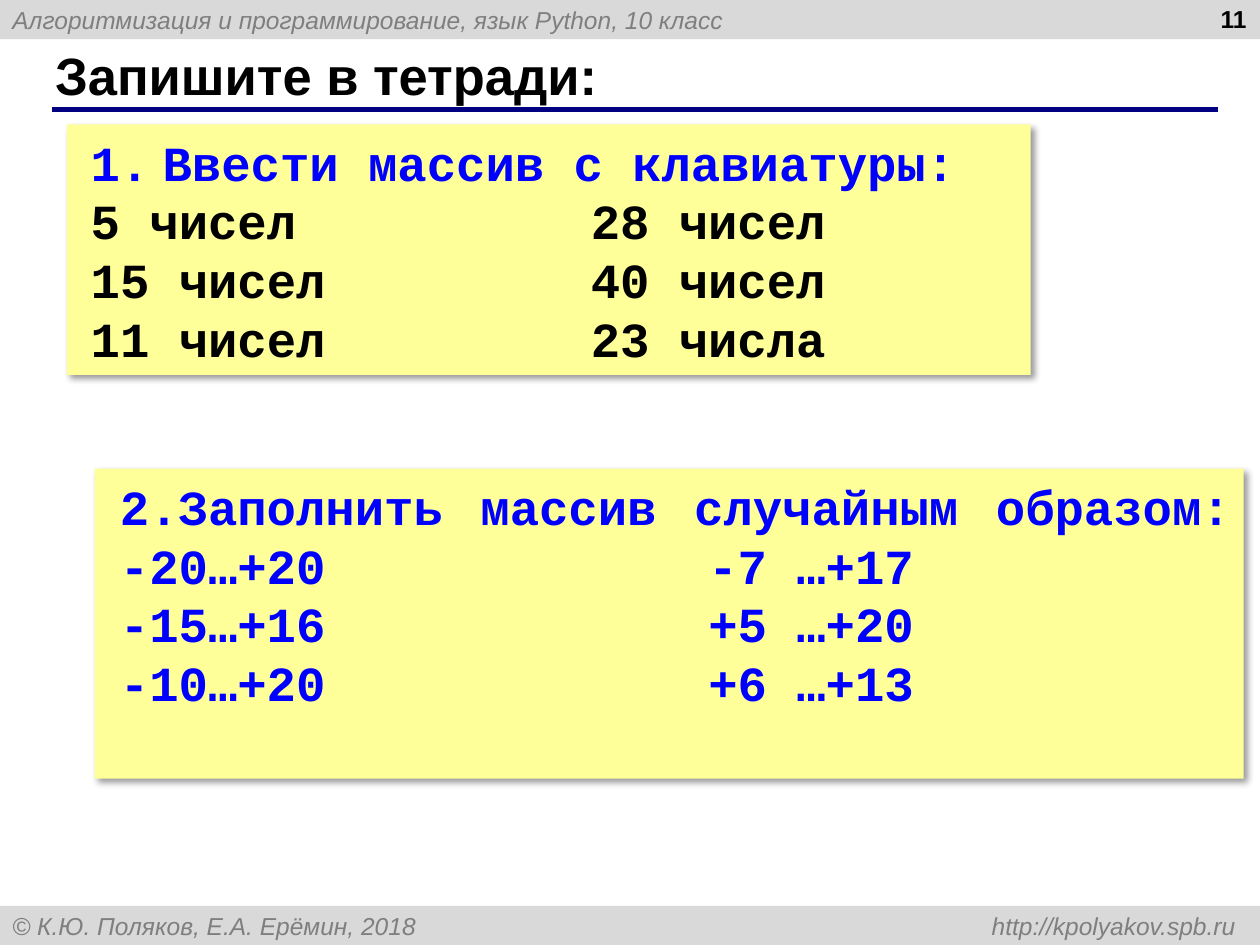
"""Build the notebook exercise slide about filling arrays."""
from dataclasses import dataclass
from typing import Optional

import pptx
import pptx.dml.color
import pptx.enum.shapes
import pptx.enum.text
import pptx.oxml
import pptx.oxml.ns
import pptx.util

Cm = pptx.util.Cm
ALIGN = pptx.enum.text.PP_ALIGN
ANCHOR = pptx.enum.text.MSO_ANCHOR
COLORS = {
    "bar": "D9D9D9",
    "bar_text": "7F7F7F",
    "rule": "000080",
    "card": "FFFF99",
    "task": "0000FF",
    "black": "000000",
}
BAR_FONT = {"name": "Arial", "size": pptx.util.Pt(14), "italic": True}
NUMBER_FONT = {"name": "Arial", "size": pptx.util.Pt(14), "bold": True}
TITLE_FONT = {"name": "Arial", "size": pptx.util.Pt(30), "bold": True}
TASK_FONT = {"name": "Courier New", "size": pptx.util.Pt(28), "bold": True}
SHADOW = (
    '<a:effectLst {ns}><a:outerShdw blurRad="50800" dist="38100" dir="2700000" '
    'algn="tl" rotWithShape="0"><a:srgbClr val="{color}"><a:alpha val="40000"/>'
    "</a:srgbClr></a:outerShdw></a:effectLst>"
)


@dataclass(frozen=True)
class Line:
    text: str
    color: str
    numbered: bool = False


@dataclass(frozen=True)
class Panel:
    left: float
    top: float
    width: float
    height: float
    lines: tuple[Line, ...]
    font: dict
    fill: Optional[str] = None
    align: ALIGN = ALIGN.LEFT
    anchor: ANCHOR = ANCHOR.MIDDLE
    inset: float = 0.25
    inset_top: float = 0.13
    tab: Optional[float] = None
    tab_align: str = "l"
    shadow: bool = False


BARS = (
    Panel(0, 0, 25.4, 0.79,
          (Line("Алгоритмизация и программирование, язык Python, 10 класс", "bar_text"),),
          BAR_FONT, "bar"),
    Panel(0, 18.26, 25.4, 0.79,
          (Line("© К.Ю. Поляков, Е.А. Ерёмин, 2018 \thttp://kpolyakov.spb.ru", "bar_text"),),
          BAR_FONT, "bar", tab=24.66, tab_align="r"),
)
HEADINGS = (
    Panel(0.86, 0.84, 23.27, 1.32, (Line("Запишите в тетради:", "black"),), TITLE_FONT),
    Panel(19.46, -0.05, 5.92, 1.32, (Line("11", "black"),), NUMBER_FONT,
          align=ALIGN.RIGHT, anchor=ANCHOR.TOP),
)
TASKS = (
    Panel(1.35, 2.51, 19.43, 5.05,
          (Line("Ввести массив с клавиатуры:", "task", numbered=True),
           Line("5 чисел\t28 чисел", "black"),
           Line("15 чисел\t40 чисел", "black"),
           Line("11 чисел\t23 числа", "black")),
          TASK_FONT, "card", ALIGN.JUSTIFY, inset=0.48, tab=10.08, shadow=True),
    Panel(1.91, 9.45, 23.16, 6.25,
          (Line("2.Заполнить массив случайным образом: ", "task"),
           Line("-20…+20\t-7 …+17", "task"),
           Line("-15…+16\t+5 …+20", "task"),
           Line("-10…+20\t+6 …+13", "task")),
          TASK_FONT, "card", ALIGN.JUSTIFY, ANCHOR.TOP, 0.51, 0.15, 11.86, shadow=True),
)


def rgb(key: str) -> pptx.dml.color.RGBColor:
    """Return the named colour."""
    return pptx.dml.color.RGBColor.from_string(COLORS[key])


def set_attributes(target, values: dict) -> None:
    """Set every format value on the target."""
    for name, value in values.items():
        setattr(target, name, value)


def write_line(paragraph, line: Line, panel: Panel) -> None:
    """Write one line with its numbering, tab stop and font."""
    paragraph.alignment = panel.align
    properties = paragraph._p.get_or_add_pPr()
    if line.numbered:
        properties.set("marL", str(Cm(1.45)))
        properties.set("indent", str(Cm(-1.45)))
        numbering = pptx.oxml.ns.qn("a:buAutoNum")
        properties.append(properties.makeelement(numbering, {"type": "arabicPeriod"}))
    if panel.tab is not None:
        stops = properties.makeelement(pptx.oxml.ns.qn("a:tabLst"), {})
        stop = {"pos": str(Cm(panel.tab)), "algn": panel.tab_align}
        stops.append(stops.makeelement(pptx.oxml.ns.qn("a:tab"), stop))
        properties.append(stops)
    run = paragraph.add_run()
    run.text = line.text
    set_attributes(run.font, panel.font)
    run.font.color.rgb = rgb(line.color)


def draw_panel(slide, panel: Panel) -> None:
    """Draw a panel, filled or plain, with its lines."""
    box = tuple(Cm(v) for v in (panel.left, panel.top, panel.width, panel.height))
    if panel.fill:
        shape = slide.shapes.add_shape(pptx.enum.shapes.MSO_SHAPE.RECTANGLE, *box)
        shape.fill.solid()
        shape.fill.fore_color.rgb = rgb(panel.fill)
        shape.line.fill.background()
        if panel.shadow:
            effect = SHADOW.format(ns=pptx.oxml.ns.nsdecls("a"), color=COLORS["black"])
            shape._element.spPr.append(pptx.oxml.parse_xml(effect))
        else:
            shape.shadow.inherit = False
    else:
        shape = slide.shapes.add_textbox(*box)
    frame = shape.text_frame
    set_attributes(frame, {
        "word_wrap": True,
        "vertical_anchor": panel.anchor,
        "margin_left": Cm(panel.inset),
        "margin_right": Cm(0.25),
        "margin_top": Cm(panel.inset_top),
        "margin_bottom": Cm(0.13),
    })
    for index, line in enumerate(panel.lines):
        paragraph = frame.add_paragraph() if index else frame.paragraphs[0]
        write_line(paragraph, line, panel)


def draw_rule(slide, left: float, right: float, top: float) -> None:
    """Draw the rule under the title."""
    rule = slide.shapes.add_connector(
        pptx.enum.shapes.MSO_CONNECTOR.STRAIGHT, Cm(left), Cm(top), Cm(right), Cm(top))
    rule.line.color.rgb = rgb("rule")
    rule.line.width = pptx.util.Pt(3)
    no_effect = f"<a:effectLst {pptx.oxml.ns.nsdecls('a')}/>"
    rule._element.spPr.append(pptx.oxml.parse_xml(no_effect))


def main() -> None:
    """Build and save the slide."""
    deck = pptx.Presentation()
    set_attributes(deck, {"slide_width": Cm(25.4), "slide_height": Cm(19.05)})
    slide = deck.slides.add_slide(deck.slide_layouts[6])
    for bar in BARS:
        draw_panel(slide, bar)
    draw_rule(slide, 1.04, 24.56, 2.21)
    for panel in HEADINGS + TASKS:
        draw_panel(slide, panel)
    deck.save("out.pptx")


if __name__ == "__main__":
    main()
